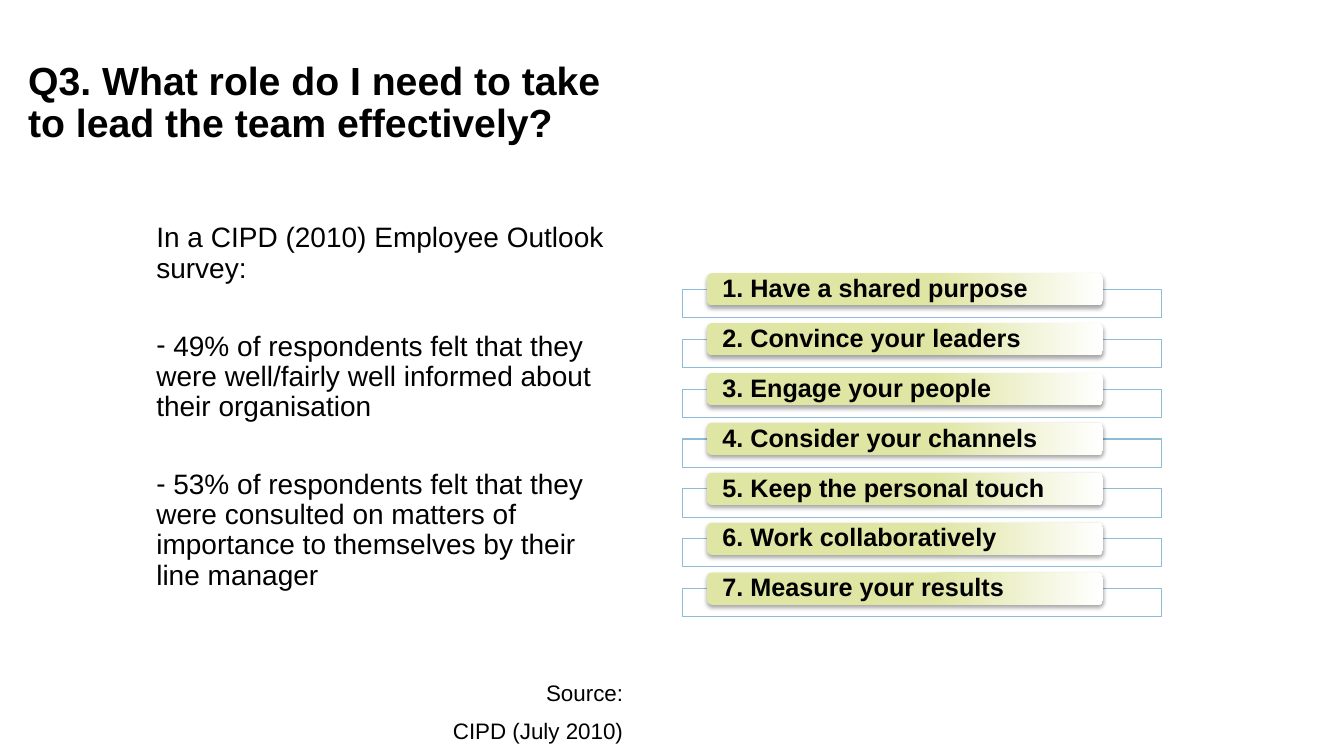
import dataclasses

import lxml.etree
import pptx
import pptx.dml.color
import pptx.enum.dml
import pptx.enum.shapes
import pptx.enum.text
import pptx.oxml.ns
import pptx.util

Inches = pptx.util.Inches
Pt = pptx.util.Pt
Align = pptx.enum.text.PP_ALIGN
Anchor = pptx.enum.text.MSO_ANCHOR
ShapeType = pptx.enum.shapes.MSO_SHAPE


@dataclasses.dataclass(frozen=True)
class Theme:
    font: str = "Arial"
    ink: str = "000000"
    paper: str = "FFFFFF"
    rail: str = "8CBCD6"
    pill: str = "DFE5A2"
    title_size: int = 28
    body_size: int = 20
    step_size: int = 18
    source_size: int = 16
    line_spacing: float = 0.9


THEME = Theme()

TITLE_LINES = ["Q3. What role do I need to take", "to lead the team effectively?"]
SURVEY_INTRO = "In a CIPD (2010) Employee Outlook survey:"
FINDINGS = [
    " 49% of respondents felt that they were well/fairly well informed about "
    "their organisation",
    " 53% of respondents felt that they were consulted on matters of importance "
    "to themselves by their line manager",
]
SOURCE_LINES = ["Source:", "CIPD (July 2010)"]
STEPS = [
    "Have a shared purpose",
    "Convince your leaders",
    "Engage your people",
    "Consider your channels",
    "Keep the personal touch",
    "Work collaboratively",
    "Measure your results",
]


def rgb(color):
    return pptx.dml.color.RGBColor.from_string(color)


def add_xml(parent, tag, **attributes):
    return lxml.etree.SubElement(parent, pptx.oxml.ns.qn(tag), attributes)


def place(shape, left, top, width, height):
    shape.left, shape.top = Inches(left), Inches(top)
    shape.width, shape.height = Inches(width), Inches(height)


def prepare_frame(frame, anchor=Anchor.TOP, side=0.1, edge=0.05):
    frame.word_wrap = True
    frame.auto_size = pptx.enum.text.MSO_AUTO_SIZE.NONE
    frame.vertical_anchor = anchor
    frame.margin_left = frame.margin_right = Inches(side)
    frame.margin_top = frame.margin_bottom = Inches(edge)


def write(frame, text, size, bold=False, align=Align.LEFT, before=0, bullet=None):
    """Fill the frame's first paragraph, or append one when it is in use."""
    paragraph = frame.paragraphs[0]
    if paragraph.runs:
        paragraph = frame.add_paragraph()
    paragraph.alignment = align
    paragraph.line_spacing = THEME.line_spacing
    paragraph.space_before = Pt(before)
    paragraph.space_after = Pt(0)
    properties = paragraph._p.get_or_add_pPr()
    properties.set("marL", "0")
    properties.set("indent", "0")
    if bullet:
        add_xml(properties, "a:buChar", char=bullet)
    else:
        add_xml(properties, "a:buNone")
    run = paragraph.add_run()
    run.text = text
    run.font.name = THEME.font
    run.font.size = Pt(size)
    run.font.bold = bold
    run.font.color.rgb = rgb(THEME.ink)


def add_shadow(shape):
    effects = add_xml(shape._element.spPr, "a:effectLst")
    shadow = add_xml(effects, "a:outerShdw", blurRad=str(Pt(3.1)),
                     dist=str(Pt(1.8)), dir="5400000", rotWithShape="0")
    color = add_xml(shadow, "a:srgbClr", val=THEME.ink)
    add_xml(color, "a:alpha", val="35000")


def add_rail(slide, left, top, width, height):
    rail = slide.shapes.add_shape(ShapeType.RECTANGLE, Inches(left), Inches(top),
                                  Inches(width), Inches(height))
    rail.shadow.inherit = False
    rail.fill.solid()
    rail.fill.fore_color.rgb = rgb(THEME.paper)
    rail.line.color.rgb = rgb(THEME.rail)
    rail.line.width = Pt(0.75)


def add_pill(slide, text, left, top, width, height):
    pill = slide.shapes.add_shape(ShapeType.ROUNDED_RECTANGLE, Inches(left),
                                  Inches(top), Inches(width), Inches(height))
    pill.line.fill.background()
    pill.fill.gradient()
    pill.fill.gradient_angle = 0
    stops = zip(pill.fill.gradient_stops, (0.57, 1), (THEME.pill, THEME.paper))
    for stop, position, color in stops:
        stop.position = position
        stop.color.rgb = rgb(color)
    add_shadow(pill)
    prepare_frame(pill.text_frame, Anchor.MIDDLE, side=0.14, edge=0)
    write(pill.text_frame, text, THEME.step_size, bold=True)


def add_steps(slide):
    first_top, pitch = 2.71, 0.495
    for index, step in enumerate(STEPS):
        top = first_top + index * pitch
        add_rail(slide, 6.77, top + 0.16, 4.75, 0.28)
        add_pill(slide, f"{index + 1}. {step}", 7.01, top, 3.93, 0.32)


def fill_title(title):
    place(title, 0.18, 0.56, 8.95, 1.06)
    prepare_frame(title.text_frame)
    for line in TITLE_LINES:
        write(title.text_frame, line, THEME.title_size, bold=True)


def fill_survey(body):
    place(body, 1.45, 2.17, 4.83, 4.96)
    frame = body.text_frame
    prepare_frame(frame)
    write(frame, SURVEY_INTRO, THEME.body_size)
    for finding in FINDINGS:
        write(frame, finding, THEME.body_size, before=34, bullet="-")
    for line, gap in zip(SOURCE_LINES, (65, 10)):
        write(frame, line, THEME.source_size, align=Align.RIGHT, before=gap)


def main():
    presentation = pptx.Presentation()
    presentation.slide_width = Inches(13.33)
    presentation.slide_height = Inches(7.5)
    slide = presentation.slides.add_slide(presentation.slide_layouts[1])

    # Numbered steps on the right
    add_steps(slide)

    # Question and survey findings on the left
    fill_title(slide.shapes.title)
    fill_survey(slide.placeholders[1])

    presentation.save("out.pptx")


if __name__ == "__main__":
    main()
